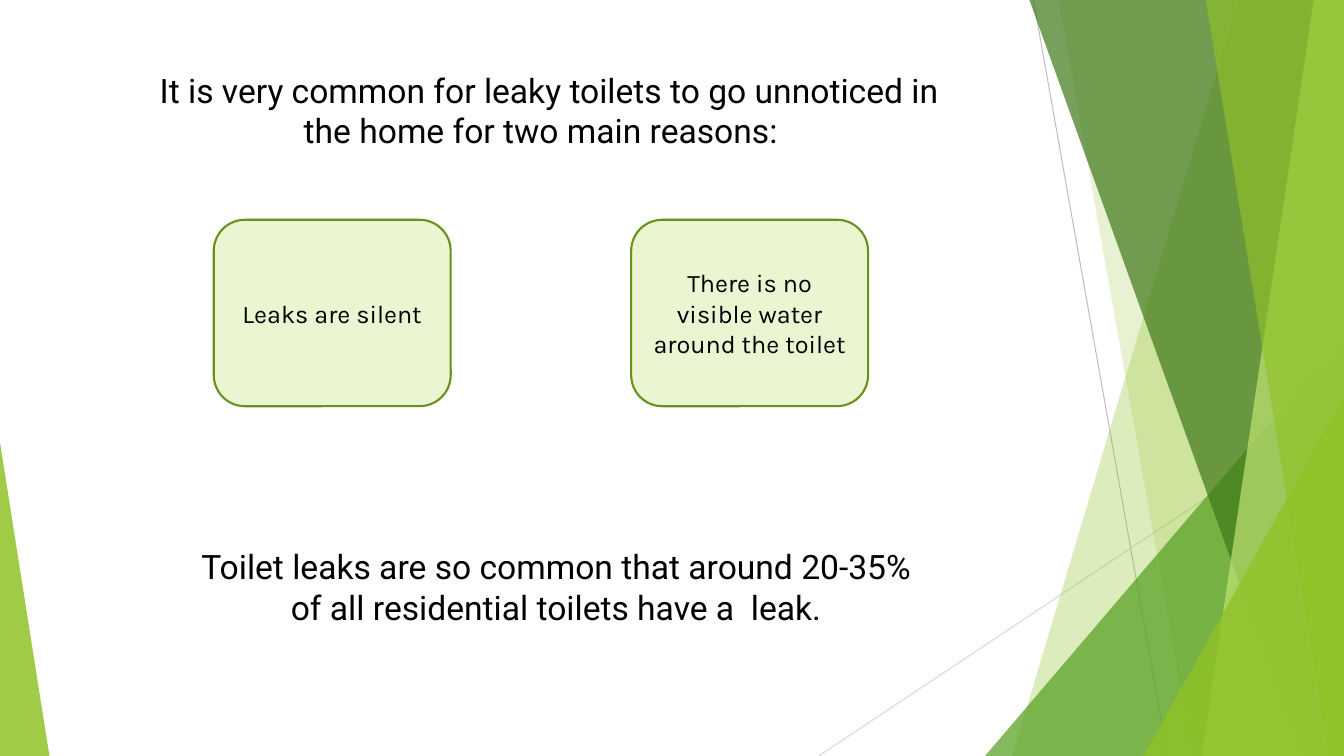
from lxml import etree
from pptx import Presentation
from pptx.dml.color import RGBColor
from pptx.enum import shapes, text
from pptx.oxml import ns
from pptx.util import Inches, Pt

COLORS = {
    "lime": "90C226", "green": "54A021", "forest": "3F7819", "pale": "C0E474",
    "card": "EAF6D1", "edge": "6B901C", "ink": "000000",
    "gray": "BFBFBF", "light": "D9D9D9",
}
WIDE, HIGH = 13.33, 7.5


def paint(shape, color, alpha=100):
    """Fill a shape without shadow, at an opacity in percent."""
    shape.shadow.inherit = False
    shape.fill.solid()
    shape.fill.fore_color.rgb = RGBColor.from_string(COLORS[color])
    if alpha < 100:
        tone = shape.fill._xPr.find(".//" + ns.qn("a:srgbClr"))
        etree.SubElement(tone, ns.qn("a:alpha"), val=str(alpha * 1000))


def write(shape, words, font, size):
    frame = shape.text_frame
    frame.word_wrap = True
    frame.text = words
    para = frame.paragraphs[0]
    para.alignment = text.PP_ALIGN.CENTER
    para.font.name = font
    para.font.size = Pt(size)
    para.font.color.rgb = RGBColor.from_string(COLORS["ink"])


deck = Presentation()
deck.slide_width, deck.slide_height = Inches(WIDE), Inches(HIGH)
slide = deck.slides.add_slide(deck.slide_layouts[6])
items = slide.shapes

# Thin lines behind the facets
for x1, y1, x2, y2, color in [
    (10.25, 0, 11.58, HIGH, "gray"),
    (WIDE, 4.03, 8.12, HIGH, "light"),
]:
    line = items.add_connector(
        shapes.MSO_CONNECTOR.STRAIGHT,
        Inches(x1), Inches(y1), Inches(x2), Inches(y2))
    line.line.color.rgb = RGBColor.from_string(COLORS[color])
    line.line.width = Pt(0.75)
    etree.SubElement(line._element.spPr, ns.qn("a:effectLst"))

# Facets, back to front: bands (top x, foot x) reach the right edge,
# triangles (left, top, width, apex) stand on the bottom edge
for kind, place, color, alpha in [
    ("band", (12.28, 10.04), "lime", 30),
    ("band", (10.5, 11.83), "lime", 20),
    ("triangle", (9.77, 3.33, 3.56, 1), "green", 72),
    ("band", (10.21, 12.91), "forest", 70),
    ("band", (13.03, 11.92), "pale", 70),
    ("band", (11.96, 13.18), "lime", 65),
    ("triangle", (11.34, 3.93, 1.99, 1), "lime", 80),
    ("triangle", (0, 4.39, 0.49, 0), "lime", 85),
]:
    if kind == "band":
        top, foot = place
        pen = items.build_freeform(Inches(top), 0)
        pen.add_line_segments([
            (Inches(x), Inches(y))
            for x, y in [(WIDE, 0), (WIDE, HIGH), (foot, HIGH)]])
        facet = pen.convert_to_shape()
    else:
        left, top, width, apex = place
        facet = items.add_shape(
            shapes.MSO_SHAPE.ISOSCELES_TRIANGLE,
            Inches(left), Inches(top), Inches(width), Inches(HIGH - top))
        facet.adjustments[0] = apex
    paint(facet, color, alpha)
    facet.line.fill.background()

# Statements
for left, top, width, height, words in [
    (1.84, 5.37, 7.35, 0.91,
     "Toilet leaks are so common that around 20-35% of all residential "
     "toilets have a  leak."),
    (1.22, 0.64, 8.45, 1.21,
     "It is very common for leaky toilets to go unnoticed in the home "
     "for two main reasons:  "),
]:
    box = items.add_textbox(
        Inches(left), Inches(top), Inches(width), Inches(height))
    write(box, words, "Roboto", 24)

# Reason cards
for left, words in [
    (2.12, "Leaks are silent"),
    (6.26, "There is no visible water around the toilet"),
]:
    card = items.add_shape(
        shapes.MSO_SHAPE.ROUNDED_RECTANGLE,
        Inches(left), Inches(2.18), Inches(2.35), Inches(1.85))
    paint(card, "card")
    card.line.color.rgb = RGBColor.from_string(COLORS["edge"])
    card.line.width = Pt(1.5)
    card.text_frame.vertical_anchor = text.MSO_ANCHOR.MIDDLE
    write(card, words, "Karla", 18)

deck.save("out.pptx")
